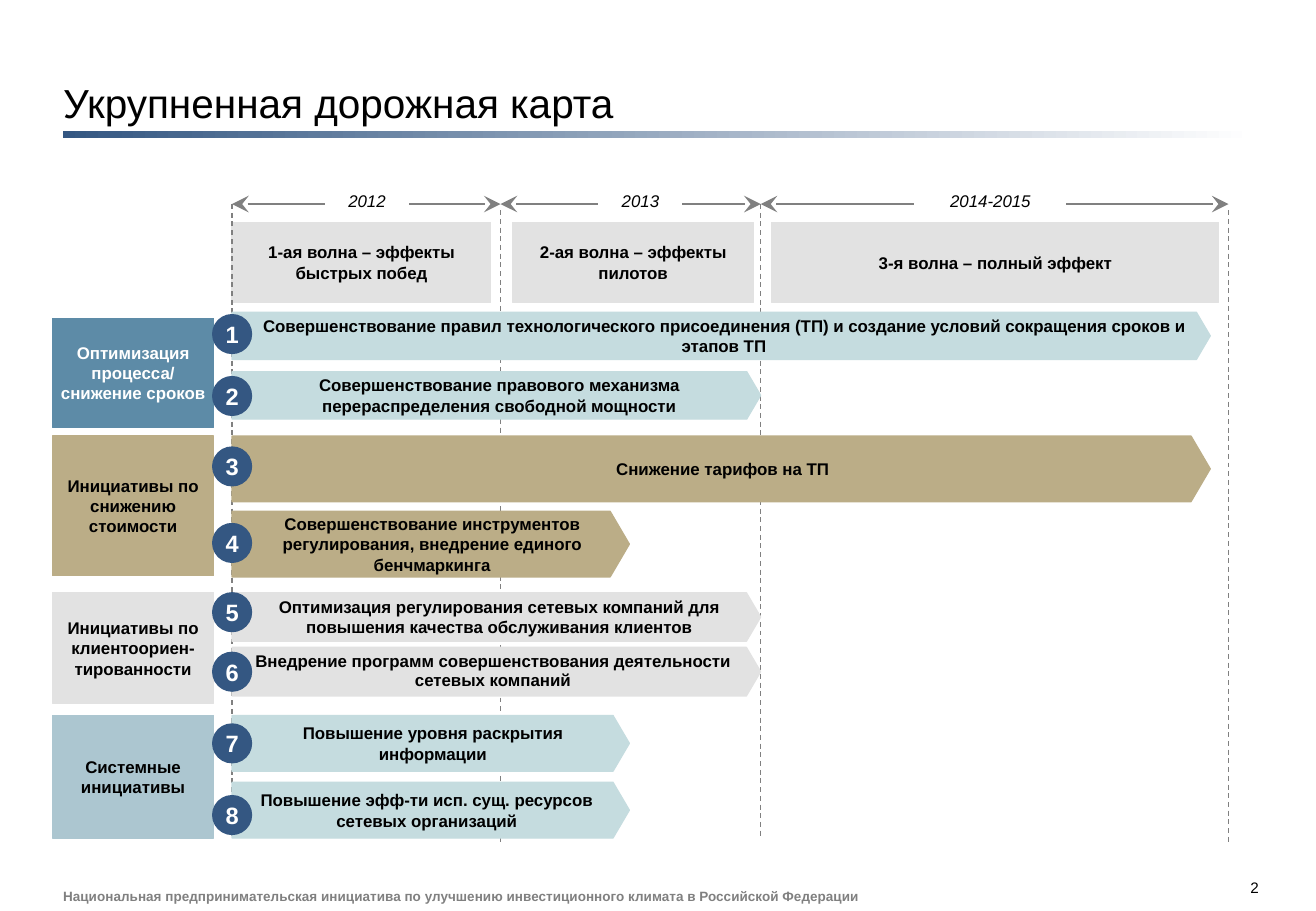
from dataclasses import dataclass

from lxml import etree
from pptx import Presentation
from pptx.dml.color import RGBColor
from pptx.enum.dml import MSO_LINE
from pptx.enum.shapes import MSO_CONNECTOR, MSO_SHAPE
from pptx.enum.text import MSO_ANCHOR, MSO_AUTO_SIZE, PP_ALIGN
from pptx.oxml.ns import qn
from pptx.util import Inches, Pt

RECT, PENTAGON, OVAL = MSO_SHAPE.RECTANGLE, MSO_SHAPE.PENTAGON, MSO_SHAPE.OVAL
LEFT, CENTER, RIGHT = PP_ALIGN.LEFT, PP_ALIGN.CENTER, PP_ALIGN.RIGHT
TOP, MIDDLE, BOTTOM = MSO_ANCHOR.TOP, MSO_ANCHOR.MIDDLE, MSO_ANCHOR.BOTTOM
NO_FIT, DASH, STRAIGHT = MSO_AUTO_SIZE.NONE, MSO_LINE.DASH, MSO_CONNECTOR.STRAIGHT
TITLE_ONLY = 5


@dataclass(frozen=True)
class Theme:
    font: str = "Arial"
    title_size: float = 24
    badge_size: float = 14
    text_size: float = 10
    number_size: float = 9
    footer_size: float = 8
    line_width: float = 0.75
    black: str = "000000"
    white: str = "FFFFFF"
    gray: str = "808080"
    light_gray: str = "E2E2E2"
    navy: str = "345782"
    steel: str = "5D8BA7"
    sand: str = "BBAD87"
    mist: str = "ACC6D0"
    aqua: str = "C5DCDF"


class RoadmapSlide:
    def __init__(self, slide, theme):
        self.slide = slide
        self.theme = theme

    def set_text(self, frame, text, size, color, align=CENTER, anchor=MIDDLE,
                 insets=(0, 0, 0, 0), bold=False, italic=False, wrap=True, spacing=None):
        frame.auto_size = NO_FIT
        frame.word_wrap = wrap
        frame.vertical_anchor = anchor
        (frame.margin_left, frame.margin_top,
         frame.margin_right, frame.margin_bottom) = map(Inches, insets)
        paragraph = frame.paragraphs[0]
        paragraph.alignment = align
        if spacing:
            paragraph.line_spacing = spacing
        run = paragraph.add_run()
        run.text = text
        run.font.name = self.theme.font
        run.font.size = Pt(size)
        run.font.bold = bold
        run.font.italic = italic
        run.font.color.rgb = RGBColor.from_string(color)

    def title(self, text, left, top, width, height):
        heading = self.slide.shapes.title
        heading.left, heading.top = Inches(left), Inches(top)
        heading.width, heading.height = Inches(width), Inches(height)
        self.set_text(heading.text_frame, text, self.theme.title_size,
                      self.theme.black, LEFT, BOTTOM, (0, 0.05, 0, 0.05))

    def label(self, text, left, top, width, height, size, color, align, **style):
        box = self.slide.shapes.add_textbox(*map(Inches, (left, top, width, height)))
        self.set_text(box.text_frame, text, size, color, align, **style)

    def shape(self, kind, left, top, width, height, color):
        figure = self.slide.shapes.add_shape(
            kind, *map(Inches, (left, top, width, height)))
        figure.shadow.inherit = False
        figure.fill.solid()
        figure.fill.fore_color.rgb = RGBColor.from_string(color)
        figure.line.color.rgb = RGBColor.from_string(color)
        figure.line.width = Pt(self.theme.line_width)
        return figure

    def fading_rule(self, left, top, width, height):
        rule = self.shape(RECT, left, top, width, height, self.theme.navy)
        rule.line.fill.background()
        rule.fill.gradient()
        rule.fill.gradient_angle = 0
        ends = ((0, self.theme.navy), (1, self.theme.white))
        for stop, (position, color) in zip(rule.fill.gradient_stops, ends):
            stop.position = position
            stop.color.rgb = RGBColor.from_string(color)

    def block(self, text, left, top, width, height, color, ink=None, **style):
        box = self.shape(RECT, left, top, width, height, color)
        self.set_text(box.text_frame, text, self.theme.text_size,
                      ink or self.theme.black, **style)

    def bar(self, text, left, top, width, height, color, insets, spacing):
        arrow = self.shape(PENTAGON, left, top, width, height, color)
        arrow.adjustments[0] = 0.293
        self.set_text(arrow.text_frame, text, self.theme.text_size, self.theme.black,
                      insets=insets, bold=True, spacing=spacing)

    def badge(self, number, left, top, diameter):
        circle = self.shape(OVAL, left, top, diameter, diameter, self.theme.navy)
        self.set_text(circle.text_frame, str(number), self.theme.badge_size,
                      self.theme.white, bold=True, wrap=False)

    def line(self, x1, y1, x2, y2, dashed=False, arrows=False):
        connector = self.slide.shapes.add_connector(
            STRAIGHT, *map(Inches, (x1, y1, x2, y2)))
        connector.line.color.rgb = RGBColor.from_string(self.theme.gray)
        connector.line.width = Pt(self.theme.line_width)
        if dashed:
            connector.line.dash_style = DASH
        properties = connector._element.spPr
        if arrows:
            outline = properties.find(qn("a:ln"))
            for end in ("a:headEnd", "a:tailEnd"):
                etree.SubElement(outline, qn(end), type="stealth", w="lg", len="lg")
        etree.SubElement(properties, qn("a:effectLst"))


def main():
    theme = Theme()
    prs = Presentation()
    prs.slide_width, prs.slide_height = Inches(10.83), Inches(7.5)
    page = RoadmapSlide(prs.slides.add_slide(prs.slide_layouts[TITLE_ONLY]), theme)

    # Title and footer
    page.title("Укрупненная дорожная карта", 0.52, 0.18, 9.8, 0.91)
    page.fading_rule(0.52, 1.08, 9.8, 0.06)
    page.label("Национальная предпринимательская инициатива по улучшению "
               "инвестиционного климата в Российской Федерации",
               0.52, 7.31, 7.5, 0.13, theme.footer_size, theme.gray, LEFT, bold=True)
    page.label("2", 9.86, 7.23, 0.5, 0.14, theme.number_size, theme.black, RIGHT,
               anchor=TOP)

    # Timeline: year arrows with their labels, then the waves
    axis_y = 1.68
    start, end_2012, end_2013, end_2015 = 1.91, 4.12, 6.26, 10.11
    periods = [
        (start, end_2012, "2012", 2.68, 0.68,
         "1-ая волна – эффекты быстрых побед", 1.91, 2.13),
        (end_2012, end_2013, "2013", 4.93, 0.68,
         "2-ая волна – эффекты пилотов", 4.22, 1.98),
        (end_2013, end_2015, "2014-2015", 7.53, 1.24,
         "3-я волна – полный эффект", 6.35, 3.68),
    ]
    margins = (0.1, 0.1, 0.1, 0.1)
    for begin, finish, year, year_x, year_w, wave, wave_x, wave_w in periods:
        page.line(begin, axis_y, finish, axis_y, arrows=True)
        page.block(year, year_x, 1.47, year_w, 0.37, theme.white,
                   anchor=TOP, insets=margins, italic=True)
        page.block(wave, wave_x, 1.83, wave_w, 0.66, theme.light_gray,
                   insets=margins, bold=True)

    # Period boundaries
    for x, y in ((start, 1.68), (end_2012, 1.73), (end_2013, 1.68), (end_2015, 1.73)):
        page.line(x, y, x, y + 5.2, dashed=True)

    # Initiative groups
    groups = [
        ("Оптимизация процесса/ снижение сроков", 2.62, 0.9, theme.steel, theme.white),
        ("Инициативы по снижению стоимости", 3.59, 1.15, theme.sand, theme.black),
        ("Инициативы по клиентоориен-тированности", 4.88, 0.91, theme.light_gray,
         theme.black),
        ("Системные инициативы", 5.89, 1.01, theme.mist, theme.black),
    ]
    for name, top, height, color, ink in groups:
        page.block(name, 0.43, top, 1.33, height, color, ink,
                   insets=(0, 0.1, 0, 0.1), bold=True)

    # Numbered initiatives: text, top, width, height, colour, badge top, insets, spacing
    full, two_years, half = 8.05, 4.35, 3.27
    usual, narrow, tight = (0.2, 0.1, 0.1, 0.1), (0.02, 0.1, 0.02, 0.1), (0.02,) * 4
    initiatives = [
        ("Совершенствование правил технологического присоединения (ТП) и создание "
         "условий сокращения сроков и этапов ТП",
         2.57, full, 0.39, theme.aqua, 2.59, usual, None),
        ("Совершенствование правового механизма перераспределения свободной мощности",
         3.06, two_years, 0.39, theme.aqua, 3.1, usual, None),
        ("Снижение тарифов на ТП", 3.59, full, 0.54, theme.sand, 3.68, usual, None),
        ("Совершенствование инструментов регулирования, внедрение единого бенчмаркинга",
         4.21, half, 0.54, theme.sand, 4.31, usual, None),
        ("Оптимизация регулирования сетевых компаний для повышения качества "
         "обслуживания клиентов",
         4.88, two_years, 0.4, theme.light_gray, 4.88, usual, None),
        ("Внедрение программ совершенствования деятельности сетевых компаний",
         5.33, two_years, 0.4, theme.light_gray, 5.37, narrow, 0.9),
        ("Повышение уровня раскрытия информации",
         5.89, half, 0.46, theme.aqua, 5.96, usual, None),
        ("Повышение эфф-ти исп. сущ. ресурсов сетевых организаций",
         6.44, half, 0.46, theme.aqua, 6.55, tight, None),
    ]
    for number, initiative in enumerate(initiatives, 1):
        text, top, width, height, color, badge_top, insets, spacing = initiative
        page.bar(text, start, top, width, height, color, insets, spacing)
        page.badge(number, 1.75, badge_top, 0.32)

    prs.save("out.pptx")


if __name__ == "__main__":
    main()
